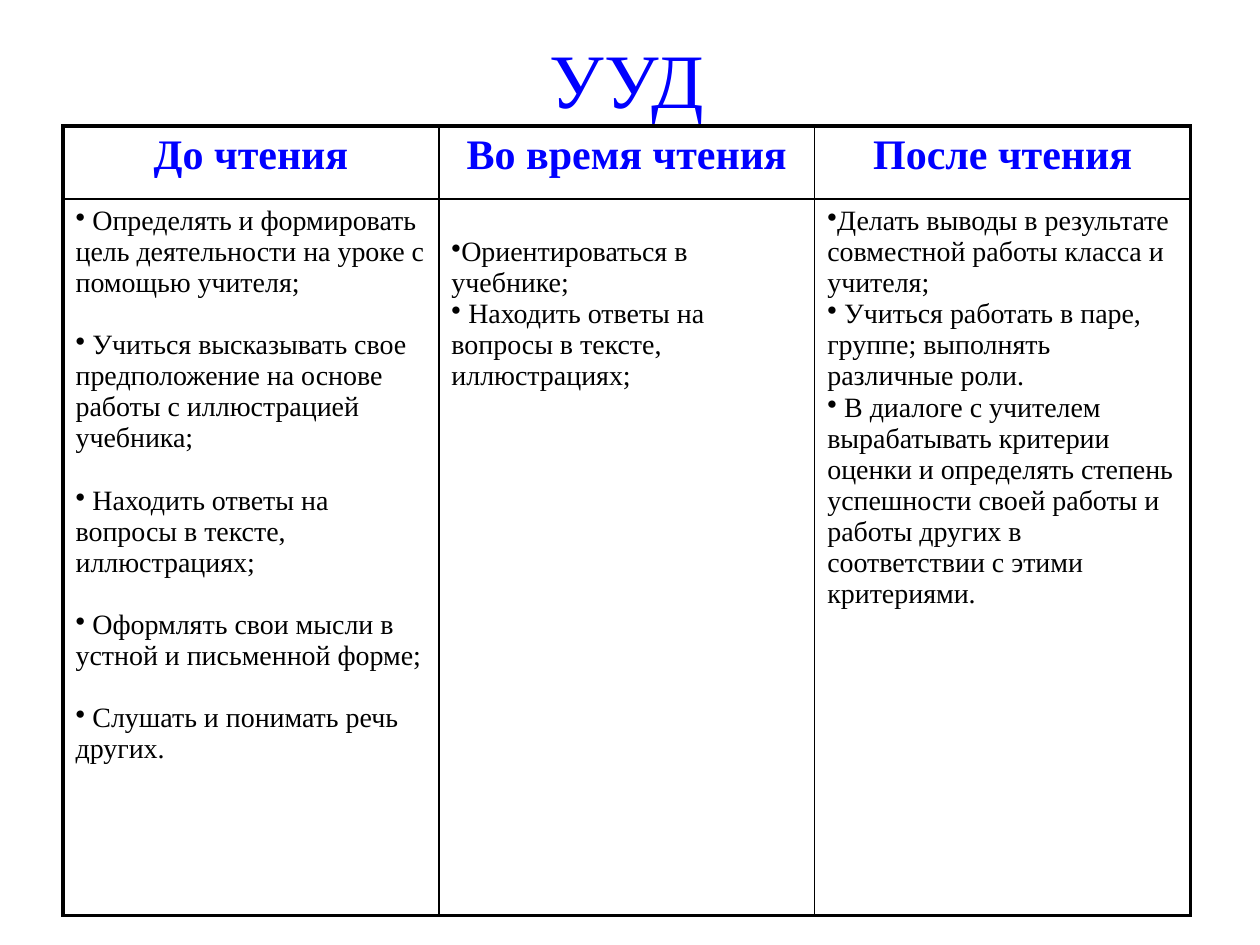
from pptx import Presentation
from pptx.dml.color import RGBColor
from pptx.enum.text import MSO_ANCHOR, PP_ALIGN
from pptx.oxml.ns import qn
from pptx.util import Pt
from lxml.etree import SubElement

TITLE = "УУД"
COLUMNS = [
    {
        "heading": "До чтения",
        "lead": 0,
        "gap": 17.7,
        "items": [
            " Определять и формировать цель деятельности на уроке с помощью учителя;",
            " Учиться высказывать свое предположение на основе работы с иллюстрацией учебника;",
            " Находить ответы на вопросы в тексте, иллюстрациях;",
            " Оформлять свои мысли в устной и письменной форме;",
            " Слушать и понимать речь других.",
        ],
    },
    {
        "heading": "Во время чтения",
        "lead": 17.7,
        "gap": 0,
        "items": [
            "Ориентироваться в учебнике;",
            " Находить ответы на вопросы в тексте, иллюстрациях;",
        ],
    },
    {
        "heading": "После чтения",
        "lead": 0,
        "gap": 0,
        "items": [
            "Делать выводы в результате совместной работы класса и учителя;",
            " Учиться работать в паре, группе; выполнять различные роли.",
            " В диалоге с учителем вырабатывать критерии оценки и определять степень "
            "успешности своей работы и работы других в соответствии с этими критериями.",
        ],
    },
]

THEME = {
    "font": "Times New Roman",
    "accent": "0000FF",
    "text": "000000",
    "border": "000000",
    "title_size": 44,
    "heading_size": 24,
    "body_size": 16,
    "outer_line": 2.25,
    "inner_line": 1,
}
LEFT, WIDTH = 36, 644.4
TITLE_HEIGHT = 82.8
TABLE_TOP = 72
ROW_HEIGHTS = [41.8, 409.4]
INSET_X, INSET_Y = 7.2, 3.6


def write_text(frame, lines, size, color, bold=False, align=PP_ALIGN.LEFT,
               bullet=None, gap=0):
    frame.word_wrap = True
    for index, line in enumerate(lines):
        para = frame.paragraphs[0] if index == 0 else frame.add_paragraph()
        para.alignment = align
        para.space_before = Pt(gap if index else 0)
        if bullet:
            properties = para._p.get_or_add_pPr()
            properties.set("marL", "0")
            properties.set("indent", "0")
            SubElement(properties, qn("a:buChar"), char=bullet)
        span = para.add_run()
        span.text = line
        span.font.name = THEME["font"]
        span.font.size = Pt(size)
        span.font.bold = bold
        span.font.color.rgb = RGBColor.from_string(color)


def set_borders(cell, row, column, last_row, last_column):
    edges = {
        "a:lnL": column == 0,
        "a:lnR": column == last_column,
        "a:lnT": row == 0,
        "a:lnB": row == last_row,
    }
    properties = cell._tc.get_or_add_tcPr()
    for tag, is_outer in edges.items():
        width = THEME["outer_line" if is_outer else "inner_line"]
        line = SubElement(properties, qn(tag), w=str(Pt(width)))
        fill = SubElement(line, qn("a:solidFill"))
        SubElement(fill, qn("a:srgbClr"), val=THEME["border"])


def add_title(page):
    box = page.shapes.add_textbox(Pt(LEFT), Pt(0), Pt(WIDTH), Pt(TITLE_HEIGHT))
    frame = box.text_frame
    frame.vertical_anchor = MSO_ANCHOR.MIDDLE
    frame.margin_top = Pt(INSET_Y + 6)
    write_text(frame, [TITLE], THEME["title_size"], THEME["accent"],
               align=PP_ALIGN.CENTER)


def add_skills_table(page):
    table = page.shapes.add_table(
        len(ROW_HEIGHTS), len(COLUMNS), Pt(LEFT), Pt(TABLE_TOP),
        Pt(WIDTH), Pt(sum(ROW_HEIGHTS))).table
    table.first_row = False
    table.horz_banding = False
    for row, height in zip(table.rows, ROW_HEIGHTS):
        row.height = Pt(height)
    for column, content in enumerate(COLUMNS):
        table.columns[column].width = Pt(WIDTH / len(COLUMNS))
        for row in range(len(ROW_HEIGHTS)):
            cell = table.cell(row, column)
            cell.margin_left = cell.margin_right = Pt(INSET_X)
            cell.margin_top = cell.margin_bottom = Pt(INSET_Y)
            set_borders(cell, row, column, len(ROW_HEIGHTS) - 1, len(COLUMNS) - 1)
            cell.fill.background()
        heading, body = table.cell(0, column), table.cell(1, column)
        body.margin_top = Pt(INSET_Y + content["lead"])
        write_text(heading.text_frame, [content["heading"]], THEME["heading_size"],
                   THEME["accent"], bold=True, align=PP_ALIGN.CENTER)
        write_text(body.text_frame, content["items"], THEME["body_size"],
                   THEME["text"], bullet="•", gap=content["gap"])


def main():
    deck = Presentation()
    deck.slide_width, deck.slide_height = Pt(720), Pt(540)
    page = deck.slides.add_slide(deck.slide_layouts[6])
    add_title(page)
    add_skills_table(page)
    deck.save("out.pptx")


if __name__ == "__main__":
    main()
